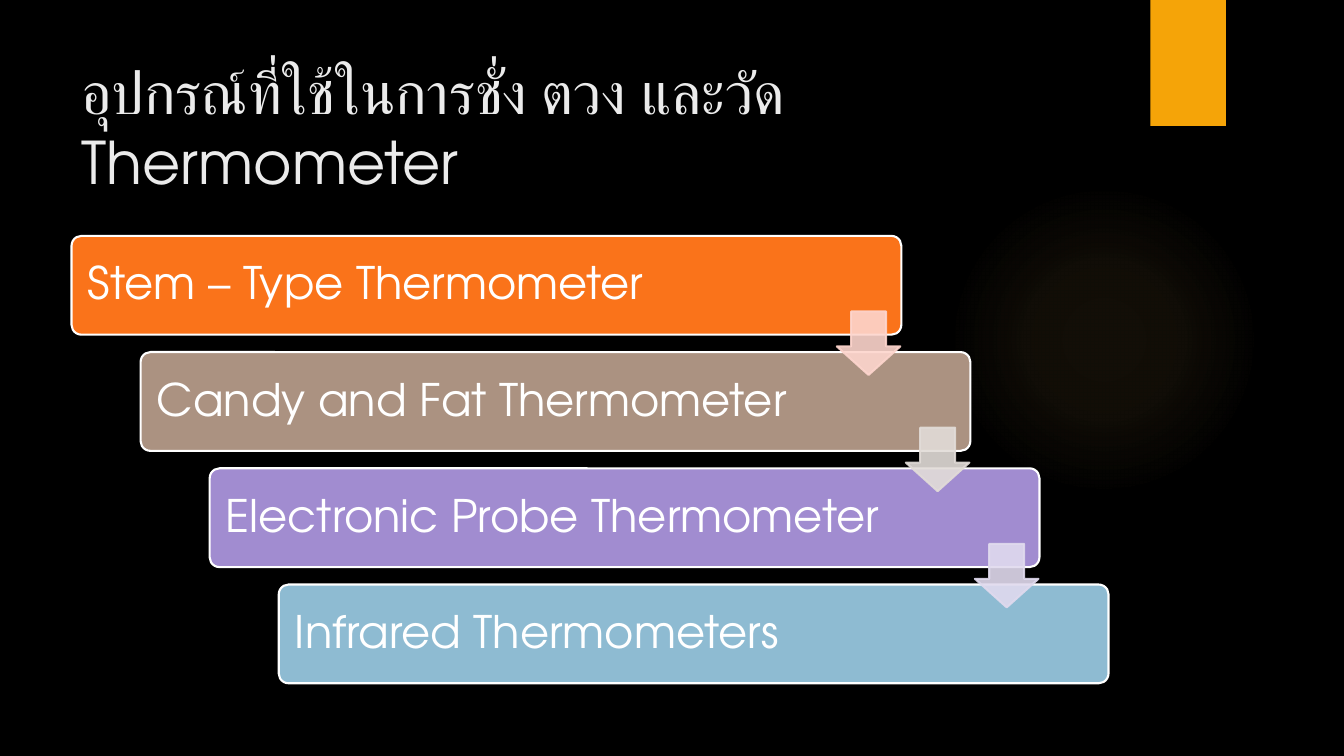
from lxml import etree
from pptx import Presentation
from pptx.dml.color import RGBColor
from pptx.enum.shapes import MSO_SHAPE
from pptx.enum.text import MSO_ANCHOR, MSO_AUTO_SIZE, PP_ALIGN
from pptx.oxml import parse_xml
from pptx.oxml.ns import nsdecls, qn
from pptx.util import Inches, Pt

OVAL, RECT = MSO_SHAPE.OVAL, MSO_SHAPE.RECTANGLE
ROUND, ARROW = MSO_SHAPE.ROUNDED_RECTANGLE, MSO_SHAPE.DOWN_ARROW
TOP, MIDDLE, LEFT = MSO_ANCHOR.TOP, MSO_ANCHOR.MIDDLE, PP_ALIGN.LEFT
NO_FIT = MSO_AUTO_SIZE.NONE


def rgb(code):
    return RGBColor.from_string(code)


class Deck:
    font = "TeX Gyre Adventor"
    white = "FFFFFF"

    def __init__(self, slide):
        self.slide = slide

    def fade(self, fill, alpha):
        tint = fill._xPr.find(".//" + qn("a:srgbClr"))
        etree.SubElement(tint, qn("a:alpha")).set("val", str(alpha * 1000))

    def shape(self, kind, box, fill, line=None, adj=(), alpha=None):
        item = self.slide.shapes.add_shape(kind, *map(Inches, box))
        item.shadow.inherit = False
        for i, value in enumerate(adj):
            item.adjustments[i] = value
        item.fill.solid()
        item.fill.fore_color.rgb = rgb(fill)
        if line:
            item.line.color.rgb = rgb(line)
            item.line.width = Pt(1.5)
        else:
            item.line.fill.background()
        if alpha:
            self.fade(item.fill, alpha)
            self.fade(item.line.fill, alpha)
        return item

    def glow(self, box, color, stops):
        item = self.shape(OVAL, box, color)
        marks = "".join(
            f'<a:gs pos="{pos * 1000}"><a:srgbClr val="{color}">'
            f'<a:alpha val="{alpha * 1000}"/></a:srgbClr></a:gs>'
            for pos, alpha in stops)
        solid = item._element.spPr.find(qn("a:solidFill"))
        solid.getparent().replace(solid, parse_xml(
            f'<a:gradFill {nsdecls("a")} rotWithShape="1"><a:gsLst>{marks}</a:gsLst>'
            '<a:path path="circle"><a:fillToRect l="50000" t="50000" r="50000" b="50000"/>'
            '</a:path></a:gradFill>'))

    def shade(self, item):
        effects = item._element.spPr.find(qn("a:effectLst"))
        effects.append(parse_xml(
            f'<a:outerShdw {nsdecls("a")} blurRad="{Pt(3)}" dist="{Pt(2)}" dir="5400000">'
            '<a:srgbClr val="000000"><a:alpha val="45000"/></a:srgbClr></a:outerShdw>'))

    def run(self, para, text, size, color):
        run = para.add_run()
        run.text = text
        run.font.size = Pt(size)
        run.font.name = self.font
        run.font.color.rgb = rgb(color)

    def title(self, box, lines):
        item = self.slide.shapes.title
        item.left, item.top, item.width, item.height = map(Inches, box)
        frame = item.text_frame
        frame.auto_size = NO_FIT
        frame.vertical_anchor = TOP
        para = frame.paragraphs[0]
        para.alignment = LEFT
        for i, line in enumerate(lines):
            if i:
                para.add_line_break()
            self.run(para, line, 42, "EBEBEB")

    def label(self, box, text):
        frame = self.slide.shapes.add_textbox(*map(Inches, box)).text_frame
        frame.word_wrap = True
        frame.vertical_anchor = MIDDLE
        frame.margin_left = frame.margin_right = Inches(0.13)
        frame.margin_top = frame.margin_bottom = Inches(0.13)
        para = frame.paragraphs[0]
        para.line_spacing = 0.9
        self.run(para, text, 32, self.white)


def main():
    prs = Presentation()
    prs.slide_width, prs.slide_height = Inches(13.33), Inches(7.5)
    slide = prs.slides.add_slide(prs.slide_layouts[5])
    deck = Deck(slide)

    # Backdrop
    back = slide.background.fill
    back.solid()
    back.fore_color.rgb = rgb("000000")
    deck.glow((9.41, 1.83, 3.08, 3.08), "FAC96A", [(0, 7), (36, 6), (69, 0)])
    deck.shade(deck.shape(RECT, (11.41, 0, 0.75, 1.25), "F5A408"))

    # Title
    deck.title((0.71, 0.5, 10.29, 1.53),
               ["อุปกรณ์ที่ใช้ในการชั่ง ตวง และวัด", "Thermometer"])

    # Staircase of bars
    steps = [
        ("Stem – Type Thermometer", "FA731A", 7.09),
        ("Candy and Fat Thermometer", "AB9281", 6.85),
        ("Electronic Probe Thermometer", "A18CD0", 6.85),
        ("Infrared Thermometers", "8EBBD2", 6.85),
    ]
    left, top, dx, dy = 0.71, 2.34, 0.685, 1.153
    for i, (text, fill, width) in enumerate(steps):
        x, y = left + i * dx, top + i * dy
        deck.shape(ROUND, (x, y, 8.23, 0.98), fill, deck.white, [0.1])
        deck.label((x + 0.03, y + 0.03, width, 0.92), text)

    # Arrows from bar to bar
    for i, tint in enumerate(["FDD5CD", "E2DCD8", "E0DAEE"]):
        box = (left + 7.59 + i * dx, top + 0.75 + i * dy, 0.63, 0.63)
        # Adjustments: shaft width, then head length
        deck.shape(ARROW, box, tint, tint, [0.55, 0.45], 90)

    prs.save("out.pptx")


if __name__ == "__main__":
    main()
